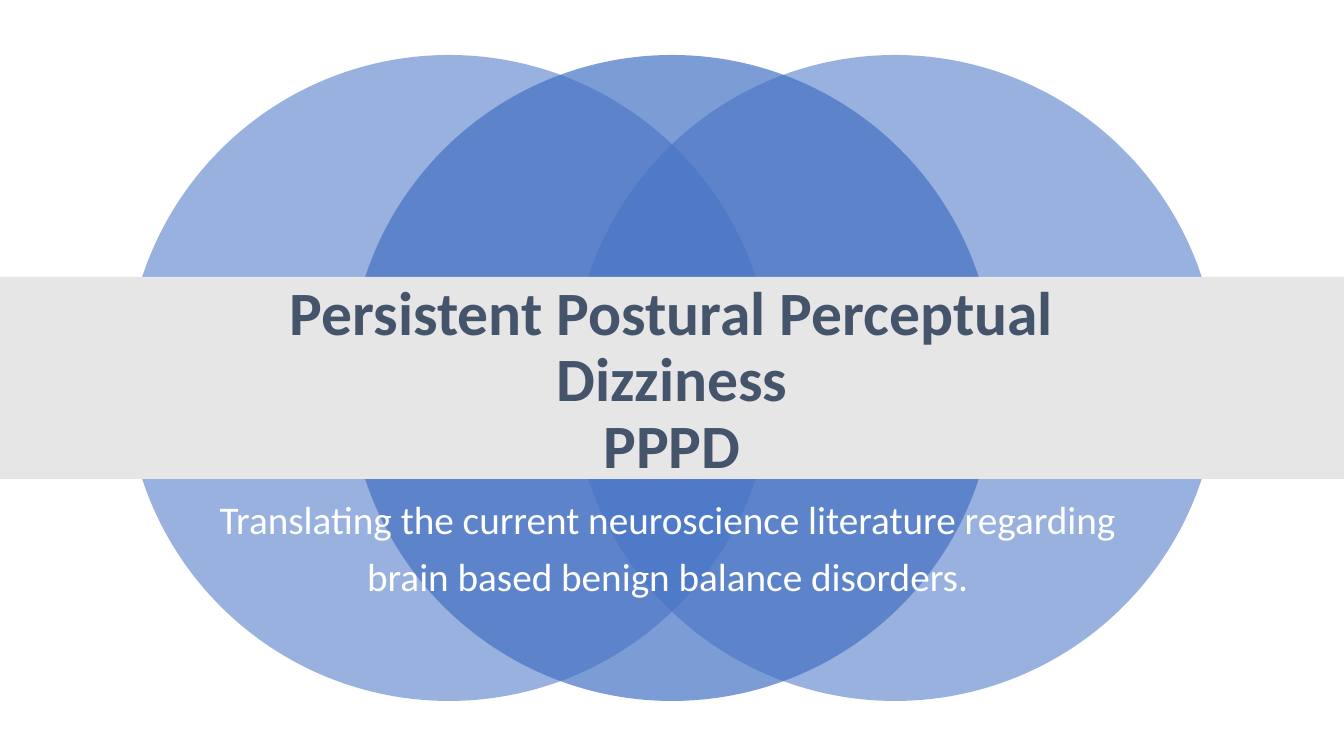
from lxml.etree import SubElement
from pptx import Presentation
from pptx.dml.color import RGBColor
from pptx.enum.shapes import MSO_SHAPE
from pptx.enum.text import MSO_ANCHOR, MSO_AUTO_SIZE, PP_ALIGN
from pptx.oxml.ns import qn
from pptx.util import Emu, Pt

WIDTH, HEIGHT = 1344, 756
BLUE, SLATE, GRAY, WHITE = "4472C4", "44546A", "E7E6E6", "FFFFFF"


def px(length):
    return Emu(round(length * 914400 / 100.8))


def color(hex_string):
    return RGBColor.from_string(hex_string)


class TitleSlide:
    font_name = "Calibri"

    def __init__(self, presentation):
        self.slide = presentation.slides.add_slide(presentation.slide_layouts[0])
        background = self.slide.background.fill
        background.solid()
        background.fore_color.rgb = color(WHITE)

    def shape(self, parent, kind, box, fill, opacity=100):
        shape = parent.add_shape(kind, *map(px, box))
        shape.shadow.inherit = False
        shape.line.fill.background()
        shape.fill.solid()
        shape.fill.fore_color.rgb = color(fill)
        if opacity < 100:
            solid_color = shape._element.spPr.find(f".//{qn('a:srgbClr')}")
            SubElement(solid_color, qn("a:alpha"), val=str(opacity * 1000))

    def circles(self, left, top, diameter, step, layers):
        group = self.slide.shapes.add_group_shape()
        for column, opacity in layers:
            box = (left + column * step, top, diameter, diameter)
            self.shape(group.shapes, MSO_SHAPE.OVAL, box, BLUE, opacity)

    def band(self, top, height):
        self.shape(self.slide.shapes, MSO_SHAPE.RECTANGLE, (0, top, WIDTH, height), GRAY)

    def placeholder(self, index, box, anchor, paragraphs, size, text_color, bold=False, space=0):
        placeholder = self.slide.placeholders[index]
        self.slide.shapes._spTree.append(placeholder._element)
        placeholder.left, placeholder.top, placeholder.width, placeholder.height = map(px, box)
        frame = placeholder.text_frame
        frame.word_wrap = True
        frame.auto_size = MSO_AUTO_SIZE.NONE
        frame.vertical_anchor = anchor
        for number, lines in enumerate(paragraphs):
            paragraph = frame.add_paragraph() if number else frame.paragraphs[0]
            paragraph.alignment = PP_ALIGN.CENTER
            paragraph.line_spacing = 0.9
            paragraph.space_before = Pt(space)
            for position, line in enumerate(lines):
                if position:
                    paragraph.add_line_break()
                run = paragraph.add_run()
                run.text = line
                run.font.name = self.font_name
                run.font.size = Pt(size)
                run.font.bold = bold
                run.font.color.rgb = color(text_color)


def main():
    presentation = Presentation()
    presentation.slide_width, presentation.slide_height = px(WIDTH), px(HEIGHT)
    title_slide = TitleSlide(presentation)
    title_slide.circles(126, 55, 646, 223, [(0, 55), (2, 55), (1, 70)])
    title_slide.band(277, 202)
    title_slide.placeholder(
        0, (168, 306, 1008, 152), MSO_ANCHOR.MIDDLE,
        [["Persistent Postural Perceptual Dizziness", "PPPD"]],
        44, SLATE, bold=True)
    title_slide.placeholder(
        1, (168, 496, 1008, 84), MSO_ANCHOR.TOP,
        [["Translating the current neuroscience literature regarding "],
         ["brain based benign balance disorders. "]],
        28, WHITE, space=10)
    presentation.save("out.pptx")


if __name__ == "__main__":
    main()
